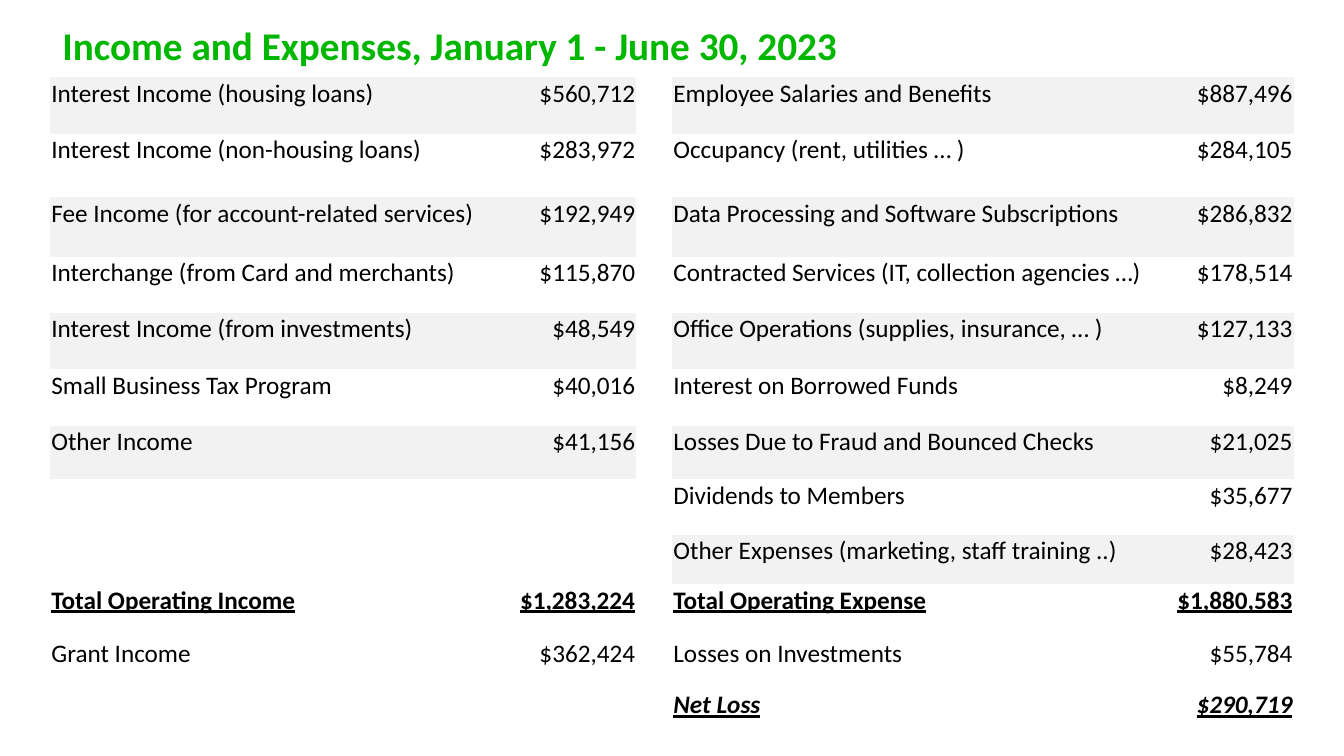
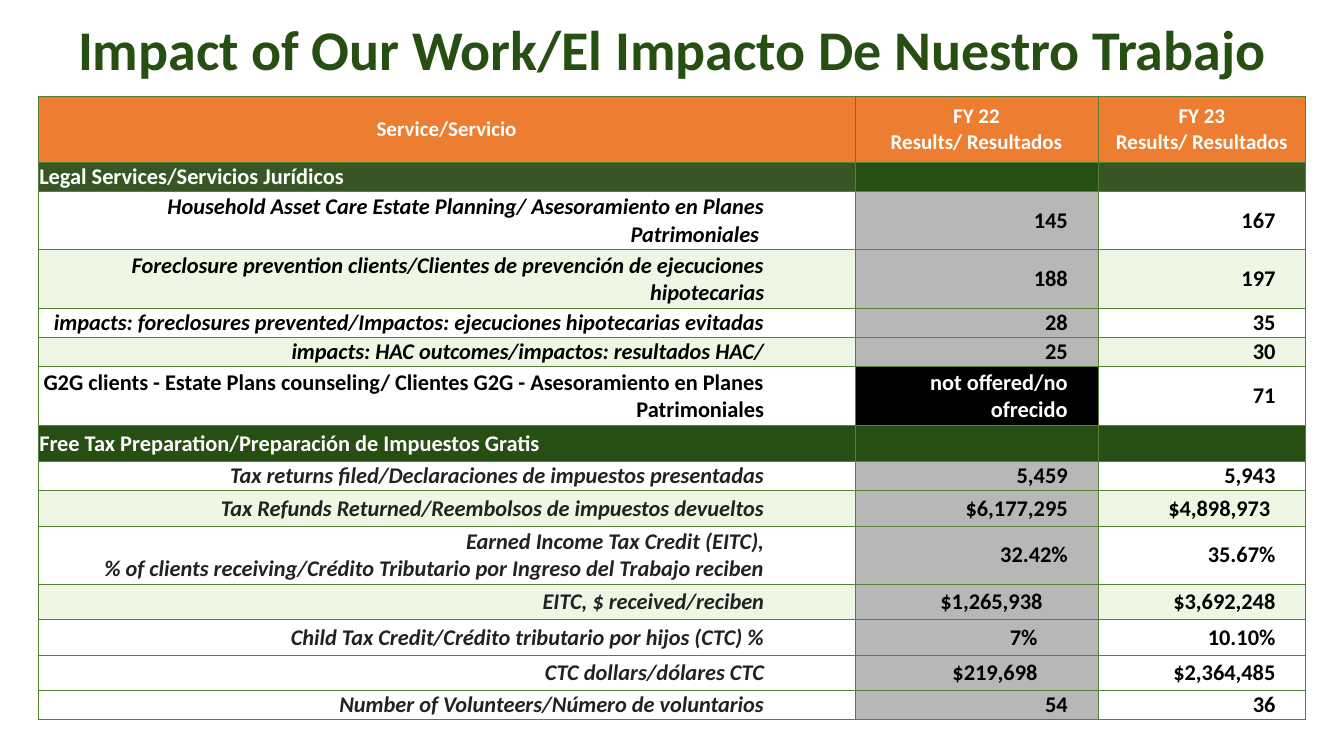
from lxml.etree import SubElement
from pptx import Presentation
from pptx.dml.color import RGBColor
from pptx.enum.text import MSO_ANCHOR, PP_ALIGN
from pptx.oxml.ns import qn
from pptx.util import Inches, Pt

FONT = "Calibri"
BLACK = RGBColor(0x00, 0x00, 0x00)
WHITE = RGBColor(0xFF, 0xFF, 0xFF)
INK = RGBColor(0x22, 0x22, 0x22)
LIME = RGBColor(0x00, 0xB7, 0x00)
FOREST = RGBColor(0x27, 0x4E, 0x13)
MOSS = RGBColor(0x38, 0x56, 0x23)
ORANGE = RGBColor(0xED, 0x7D, 0x31)
MINT = RGBColor(0xEE, 0xF7, 0xE3)
GRAY = RGBColor(0xB7, 0xB7, 0xB7)
PALE = RGBColor(0xF2, 0xF2, 0xF2)
EDGE = "548135"
NO_GRID = "{2D5ABB26-0587-4C30-8999-92F81FD0307C}"
LEFT, MID, RIGHT = PP_ALIGN.LEFT, PP_ALIGN.CENTER, PP_ALIGN.RIGHT

BUDGET = [
    ("Interest Income (housing loans)", "$560,712",
     "Employee Salaries and Benefits", "$887,496"),
    ("Interest Income (non-housing loans)", "$283,972",
     "Occupancy (rent, utilities … )", "$284,105"),
    ("Fee Income (for account-related services)", "$192,949",
     "Data Processing and Software Subscriptions", "$286,832"),
    ("Interchange (from Card and merchants)", "$115,870",
     "Contracted Services (IT, collection agencies …)", "$178,514"),
    ("Interest Income (from investments)", "$48,549",
     "Office Operations (supplies, insurance, … )", "$127,133"),
    ("Small Business Tax Program", "$40,016",
     "Interest on Borrowed Funds", "$8,249"),
    ("Other Income", "$41,156",
     "Losses Due to Fraud and Bounced Checks", "$21,025"),
    ("", "", "Dividends to Members", "$35,677"),
    ("", "", "Other Expenses (marketing, staff training ..)", "$28,423"),
    ("Total Operating Income", "$1,283,224",
     "Total Operating Expense", "$1,880,583"),
    ("Grant Income", "$362,424", "Losses on Investments", "$55,784"),
    ("", "", "Net Loss", "$290,719"),
]
BUDGET_COLS = [4.39, 1.42, 0.36, 4.95, 1.21]
BUDGET_ROWS = [0.54, 0.56, 0.63, 0.59, 0.56, 0.56, 0.56, 0.53, 0.55, 0.49,
               0.53, 0.51, 0.32]
SUM = {"bold": True, "underline": True}
STRESS = {10: SUM, 12: {**SUM, "italic": True}}

HEAD = ["Service/Servicio", "FY 22\nResults/ Resultados",
        "FY 23\nResults/ Resultados"]
LEGAL = [
    ("Household Asset Care Estate Planning/ Asesoramiento en Planes "
     "Patrimoniales ", "145", "167"),
    ("Foreclosure prevention clients/Clientes de prevención de ejecuciones "
     "hipotecarias", "188", "197"),
    ("impacts: foreclosures prevented/Impactos: ejecuciones hipotecarias "
     "evitadas", "28", "35"),
    ("impacts: HAC outcomes/impactos: resultados HAC/", "25", "30"),
    ("G2G clients - Estate Plans counseling/ Clientes G2G - Asesoramiento en "
     "Planes Patrimoniales", "not offered/no ofrecido", "71"),
]
TAX = [
    ("Tax returns filed/Declaraciones de impuestos presentadas",
     "5,459", "5,943"),
    ("Tax Refunds Returned/Reembolsos de impuestos devueltos",
     "$6,177,295", "$4,898,973"),
    ("Earned Income Tax Credit (EITC),\n% of clients receiving/Crédito "
     "Tributario por Ingreso del Trabajo reciben", "32.42%", "35.67%"),
    ("EITC, $ received/reciben", "$1,265,938", "$3,692,248"),
    ("Child Tax Credit/Crédito tributario por hijos (CTC) %", "7%", "10.10%"),
    ("CTC dollars/dólares CTC", "$219,698", "$2,364,485"),
    ("Number of Volunteers/Número de voluntarios", "54", "36"),
]
IMPACT_COLS = [8.1, 2.41, 2.06]
IMPACT_ROWS = [0.65, 0.29, 0.58, 0.58, 0.29, 0.29, 0.58, 0.36, 0.29, 0.35,
               0.58, 0.35, 0.35, 0.35, 0.29]
TINTED = {3, 5, 9, 11}
INSETS = {"$4,898,973": 0.35, "$1,265,938": 0.55, "7%": 0.6, "$219,698": 0.6}


def apply(target, style):
    for name, value in style.items():
        setattr(target, name, value)


def write(frame, text, size, color, align=LEFT, **style):
    """Write one paragraph a line; an empty line keeps the text size."""
    for i, line in enumerate(text.split("\n")):
        para = frame.add_paragraph() if i else frame.paragraphs[0]
        para.alignment = align
        if line:
            run = para.add_run()
            run.text = line
            apply(run.font, {"name": FONT, "size": Pt(size), **style})
            run.font.color.rgb = color
        else:
            SubElement(para._p, qn("a:endParaRPr"), sz=str(size * 100))


def inset(cell, left, top, right, bottom):
    sides = {"left": left, "top": top, "right": right, "bottom": bottom}
    apply(cell, {f"margin_{k}": Inches(v) for k, v in sides.items()})


def outline(cell):
    props = cell._tc.get_or_add_tcPr()
    for side in "LRTB":
        line = SubElement(props, qn(f"a:ln{side}"), w=str(Pt(0.75)))
        SubElement(SubElement(line, qn("a:solidFill")),
                   qn("a:srgbClr"), val=EDGE)


def paint(cell, color):
    cell.fill.solid()
    cell.fill.fore_color.rgb = color


def add_grid(slide, left, top, cols, rows):
    frame = slide.shapes.add_table(
        len(rows), len(cols), Inches(left), Inches(top),
        Inches(sum(cols)), Inches(sum(rows)))
    table = frame.table
    apply(table, {"first_row": False, "horz_banding": False})
    table._tbl.tblPr.find(qn("a:tableStyleId")).text = NO_GRID
    for col, width in zip(table.columns, cols):
        col.width = Inches(width)
    for row, height in zip(table.rows, rows):
        row.height = Inches(height)
    return table


def add_budget(slide):
    table = add_grid(slide, 0.5, 0.17, BUDGET_COLS, BUDGET_ROWS)
    title = table.cell(0, 0)
    title.merge(table.cell(0, 3))
    inset(title, 0.12, 0.06, 0.12, 0.06)
    write(title.text_frame, "Income and Expenses, January 1 - June 30, 2023",
          28, LIME, bold=True)
    for r, (source, gain, cost, spent) in enumerate(BUDGET, 1):
        for c, text in enumerate((source, gain, "", cost, spent)):
            cell = table.cell(r, c)
            inset(cell, 0.01, 0.01, 0.01, 0)
            write(cell.text_frame, text, 18, BLACK,
                  RIGHT if c in (1, 4) else LEFT, **STRESS.get(r, {}))
            if text and r % 2 and r < 10:
                paint(cell, PALE)


def add_title(slide, text):
    box = slide.shapes.add_textbox(
        Inches(0.59), Inches(0.07), Inches(12.15), Inches(0.89))
    frame = box.text_frame
    apply(frame, {"word_wrap": True, "vertical_anchor": MSO_ANCHOR.MIDDLE})
    write(frame, text, 40, FOREST, MID, bold=True)
    frame.paragraphs[0].line_spacing = 0.9


def fill_cell(cell, text, fill, color, align, size=16, pad=0.01, **style):
    outline(cell)
    paint(cell, fill)
    edge = 0.05 if "FY" in text else 0
    inset(cell, edge or 0.01, edge, edge or pad, edge)
    cell.vertical_anchor = MSO_ANCHOR.MIDDLE
    write(cell.text_frame, text, size, color, align, bold=True, **style)


def add_band(table, row, text, fills):
    for c, fill in enumerate(fills):
        fill_cell(table.cell(row, c), "" if c else text, fill, WHITE, LEFT)


def add_group(table, start, items, ink):
    for r, (label, *counts) in enumerate(items, start):
        fill = MINT if r in TINTED else WHITE
        plain = label.startswith("G2G")
        fill_cell(table.cell(r, 0), label, fill, ink, RIGHT,
                  pad=0.9, italic=not plain)
        for c, (text, back) in enumerate(zip(counts, (GRAY, fill)), 1):
            absent = text.startswith("not")
            fill_cell(table.cell(r, c), text, BLACK if absent else back,
                      WHITE if absent else BLACK, RIGHT,
                      pad=INSETS.get(text, 0.3))


def add_impact(slide):
    add_title(slide, "Impact of Our Work/El Impacto De Nuestro Trabajo")
    table = add_grid(slide, 0.38, 0.96, IMPACT_COLS, IMPACT_ROWS)
    for c, text in enumerate(HEAD):
        fill_cell(table.cell(0, c), text, ORANGE, WHITE, MID, size=15)
    add_band(table, 1, "Legal Services/Servicios Jurídicos",
             (MOSS, FOREST, MOSS))
    add_group(table, 2, LEGAL, BLACK)
    add_band(table, 7, "Free Tax Preparation/Preparación de Impuestos Gratis",
             (FOREST,) * 3)
    add_group(table, 8, TAX, INK)


def main():
    deck = Presentation()
    apply(deck, {"slide_width": Inches(13.33), "slide_height": Inches(7.5)})
    for build in (add_budget, add_impact):
        build(deck.slides.add_slide(deck.slide_layouts[6]))
    deck.save("out.pptx")


if __name__ == "__main__":
    main()
